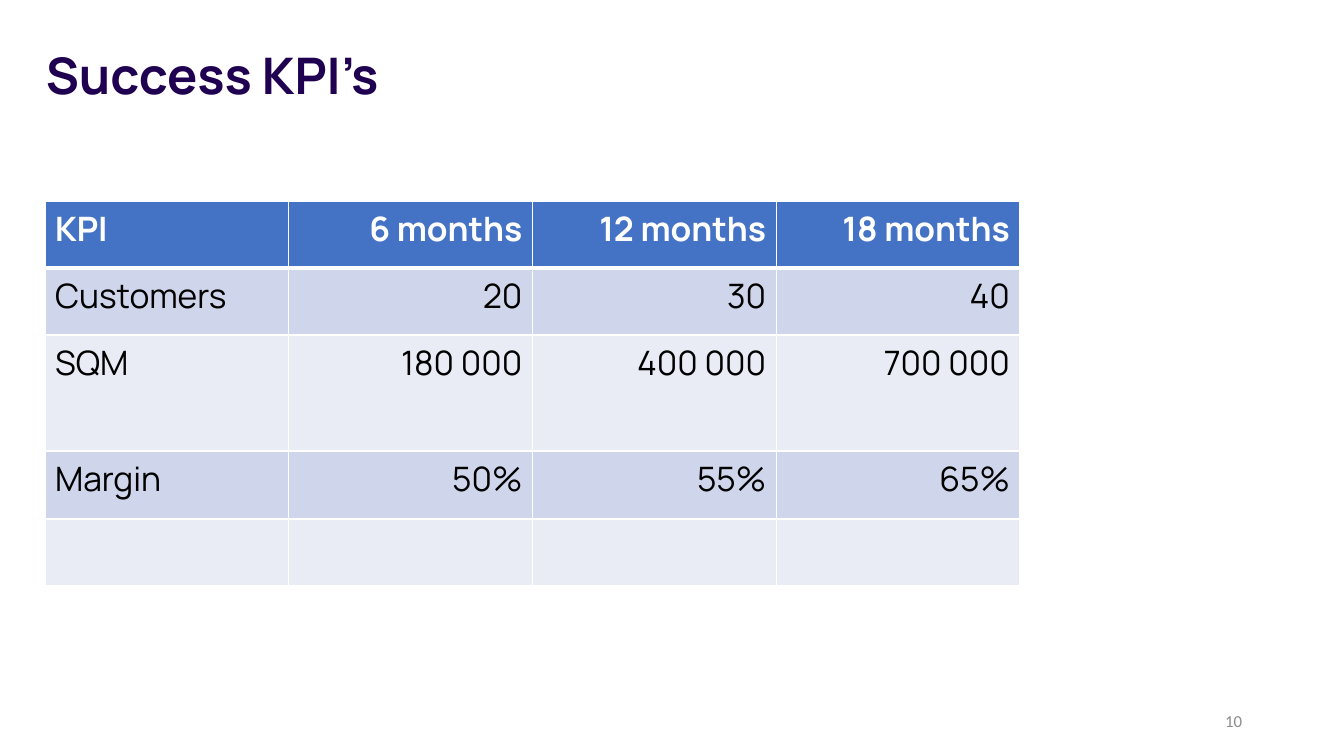
from lxml.etree import SubElement
from pptx import Presentation
from pptx.dml.color import RGBColor
from pptx.enum.text import MSO_ANCHOR, PP_ALIGN
from pptx.oxml.ns import qn
from pptx.util import Emu, Pt


def px(n):
    return Emu(round(n * 914400 / 100.8))


def style(p, font, size, color, bold=False, align=PP_ALIGN.LEFT):
    p.alignment = align
    p.font.name = font
    p.font.size = Pt(size)
    p.font.bold = bold
    p.font.color.rgb = RGBColor.from_string(color)


prs = Presentation()
prs.slide_width, prs.slide_height = px(1344), px(756)
s = prs.slides.add_slide(prs.slide_layouts[6])

# Title and page number
title = s.shapes.add_textbox(px(36), px(39), px(913), px(72))
number = s.shapes.add_textbox(px(950), px(701), px(302), px(40))
for box, text in ((title, "Success KPI’s"), (number, "10")):
    box.text_frame.word_wrap = True
    box.text_frame.text = text
number.text_frame.vertical_anchor = MSO_ANCHOR.MIDDLE
style(title.text_frame.paragraphs[0], "Manrope", 36, "200050", bold=True)
style(number.text_frame.paragraphs[0], "Calibri", 12, "8C8C8C", align=PP_ALIGN.RIGHT)

# KPI table
rows = [
    ("KPI", "6 months", "12 months", "18 months"),
    ("Customers", "20", "30", "40"),
    ("SQM", "180 000", "400 000", "700 000"),
    ("Margin", "50%", "55%", "65%"),
    ("", "", "", ""),
]
heights = [67, 67, 116, 68, 67]
fills = ["4472C4", "CFD5EA", "E9EBF5", "CFD5EA", "E9EBF5"]
table = s.shapes.add_table(5, 4, px(45), px(201), px(975), px(sum(heights))).table
for i, row in enumerate(rows):
    table.rows[i].height = px(heights[i])
    for j, text in enumerate(row):
        cell = table.cell(i, j)
        cell.text = text
        style(cell.text_frame.paragraphs[0], "Manrope", 24,
              "000000" if i else "FFFFFF", bold=i == 0,
              align=PP_ALIGN.RIGHT if j else PP_ALIGN.LEFT)

        # White borders, thicker below the header
        tcPr = cell._tc.get_or_add_tcPr()
        for side in "LRTB":
            thick = (i, side) in ((0, "B"), (1, "T"))
            ln = SubElement(tcPr, qn(f"a:ln{side}"), w=str(Pt(3 if thick else 1)))
            SubElement(SubElement(ln, qn("a:solidFill")), qn("a:srgbClr"), val="FFFFFF")
        cell.fill.solid()
        cell.fill.fore_color.rgb = RGBColor.from_string(fills[i])

prs.save("out.pptx")
